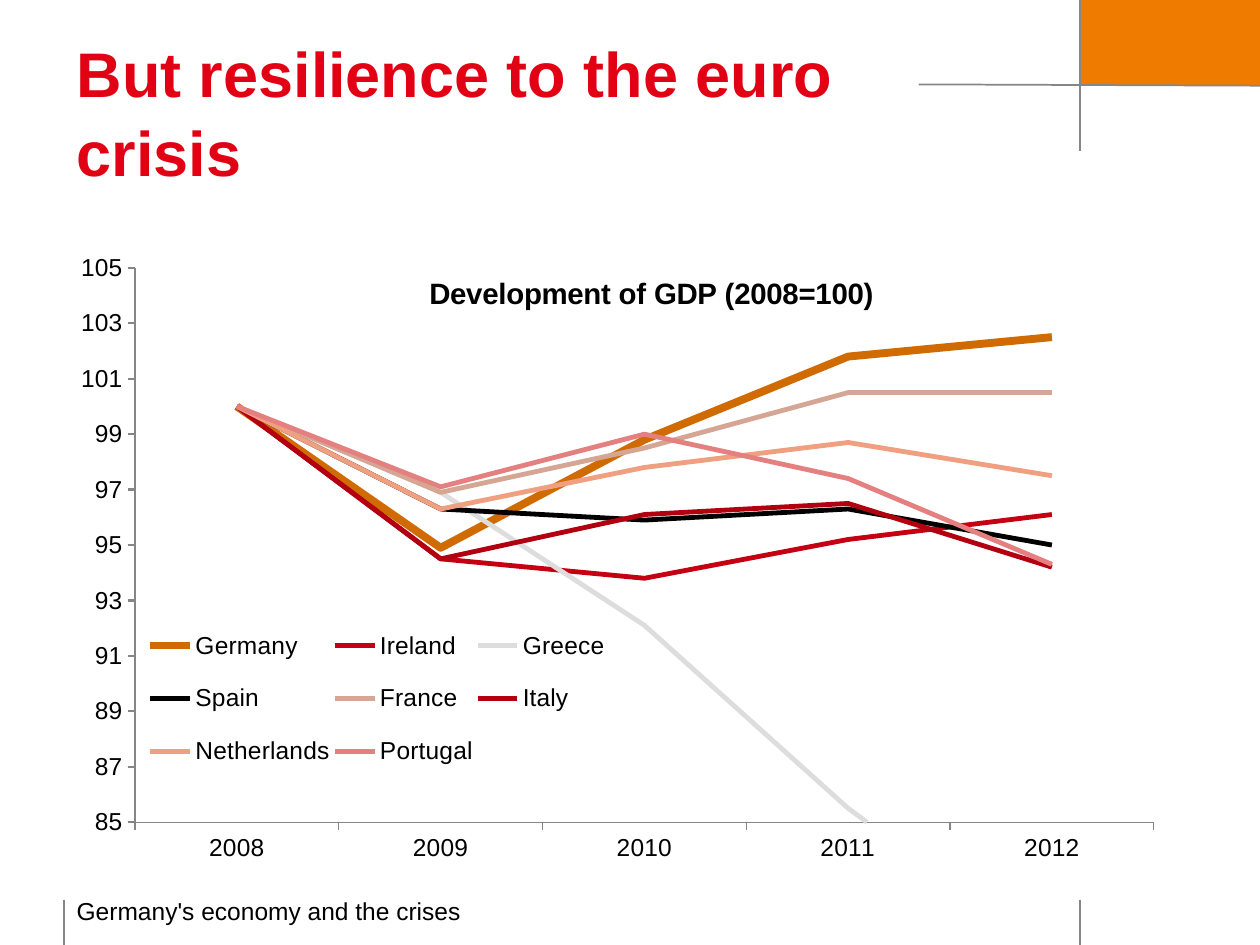
from pptx import Presentation
from pptx.chart.data import CategoryChartData
from pptx.dml.color import RGBColor
from pptx.enum.chart import XL_CHART_TYPE, XL_LEGEND_POSITION, XL_TICK_MARK
from pptx.enum.shapes import MSO_CONNECTOR, MSO_SHAPE
from pptx.enum.text import MSO_ANCHOR
from pptx.oxml import parse_xml
from pptx.oxml.ns import nsdecls, qn
from pptx.util import Inches, Pt

FONT = "Arial"
ORANGE = RGBColor(0xEF, 0x7C, 0x00)
RED = RGBColor(0xE2, 0x00, 0x15)
GREY = RGBColor(0x86, 0x86, 0x86)
BLACK = RGBColor(0x00, 0x00, 0x00)

YEARS = ["2008", "2009", "2010", "2011", "2012"]
# country: (GDP index by year, line colour, line width in points)
GDP = {
    "Germany": ([100, 94.9, 98.8, 101.8, 102.5], RGBColor(0xCF, 0x6B, 0x00), 4.5),
    "Ireland": ([100, 94.5, 93.8, 95.2, 96.1], RGBColor(0xC4, 0x00, 0x12), 2.75),
    "Greece": ([100, 96.9, 92.1, 85.5, 80.1], RGBColor(0xDD, 0xDD, 0xDD), 2.75),
    "Spain": ([100, 96.3, 95.9, 96.3, 95], BLACK, 2.75),
    "France": ([100, 96.9, 98.5, 100.5, 100.5], RGBColor(0xD6, 0xA6, 0x94), 2.75),
    "Italy": ([100, 94.5, 96.1, 96.5, 94.2], RGBColor(0xB2, 0x00, 0x10), 2.75),
    "Netherlands": ([100, 96.3, 97.8, 98.7, 97.5], RGBColor(0xF0, 0xA0, 0x80), 2.75),
    "Portugal": ([100, 97.1, 99, 97.4, 94.3], RGBColor(0xE4, 0x80, 0x80), 2.75),
}


def add_rule(slide, x1, y1, x2, y2):
    rule = slide.shapes.add_connector(
        MSO_CONNECTOR.STRAIGHT, Inches(x1), Inches(y1), Inches(x2), Inches(y2))
    rule.line.color.rgb = GREY
    rule.line.width = Pt(1)
    rule._element.spPr.append(parse_xml(f"<a:effectLst {nsdecls('a')}/>"))


def add_corner(slide, left, top, width, height):
    """Orange corner block with the two rules that cross at its inner corner."""
    block = slide.shapes.add_shape(
        MSO_SHAPE.RECTANGLE, Inches(left), Inches(top), Inches(width), Inches(height))
    block.shadow.inherit = False
    block.fill.solid()
    block.fill.fore_color.rgb = ORANGE
    block.line.fill.background()
    add_rule(slide, left, top, left, top + 1.2)
    add_rule(slide, left - 1.28, top + height - 0.01, left + width, top + height)


def add_text(slide, box, text, size, color, bold=False, anchor=MSO_ANCHOR.TOP, spacing=None):
    frame = slide.shapes.add_textbox(*map(Inches, box)).text_frame
    frame.word_wrap = True
    frame.vertical_anchor = anchor
    paragraph = frame.paragraphs[0]
    paragraph.line_spacing = spacing
    run = paragraph.add_run()
    run.text = text
    run.font.name = FONT
    run.font.size = Pt(size)
    run.font.bold = bold
    run.font.color.rgb = color


def add_footer(slide, left, top, width, height):
    rule_top = top + 0.08
    for x in (left, left + 8.06):
        add_rule(slide, x, rule_top, x, rule_top + 0.36)
    add_text(slide, (left, top, width, height), "Germany's economy and the crises", 14, BLACK)


def place(element, index, x, y, w=None, h=None, inner=False):
    """Give a chart part a manual layout, in fractions of the chart."""
    for old in element.findall(qn("c:layout")):
        element.remove(old)
    target = '<c:layoutTarget val="inner"/>' if inner else ""
    sizes = "" if w is None else f'<c:w val="{w}"/><c:h val="{h}"/>'
    element.insert(index, parse_xml(
        f"<c:layout {nsdecls('c')}><c:manualLayout>{target}"
        '<c:xMode val="edge"/><c:yMode val="edge"/>'
        f'<c:x val="{x}"/><c:y val="{y}"/>{sizes}</c:manualLayout></c:layout>'))


def style_axes(chart):
    for axis, width in ((chart.category_axis, 0.75), (chart.value_axis, 1.25)):
        axis.has_major_gridlines = False
        axis.major_tick_mark = XL_TICK_MARK.OUTSIDE
        axis.minor_tick_mark = XL_TICK_MARK.NONE
        axis.format.line.color.rgb = GREY
        axis.format.line.width = Pt(width)
    chart.value_axis.minimum_scale = 85
    chart.value_axis.maximum_scale = 105
    chart.value_axis.major_unit = 2
    chart.value_axis.tick_labels.number_format = "General"
    chart.value_axis.tick_labels.number_format_is_linked = False


def add_chart_title(chart, text):
    title = chart.chart_title
    run = title.text_frame.paragraphs[0].add_run()
    run.text = text
    run.font.name = FONT
    run.font.size = Pt(16.8)
    run.font.bold = True
    run.font.color.rgb = BLACK
    element = title._element
    for old in element.findall(qn("c:overlay")):
        element.remove(old)
    place(element, 1, 0.31, 0.04)
    element.insert(2, parse_xml(f'<c:overlay {nsdecls("c")} val="1"/>'))


def add_gdp_chart(slide, left, top, width, height):
    data = CategoryChartData()
    data.categories = YEARS
    for country, (values, _, _) in GDP.items():
        data.add_series(country, values)
    chart = slide.shapes.add_chart(
        XL_CHART_TYPE.LINE, Inches(left), Inches(top), Inches(width), Inches(height), data).chart
    chart.font.name = FONT
    chart.font.size = Pt(14)
    chart.font.color.rgb = BLACK

    chart.plots[0].vary_by_categories = False
    for series, (_, color, line_width) in zip(chart.plots[0].series, GDP.values()):
        series.smooth = False
        series.format.line.color.rgb = color
        series.format.line.width = Pt(line_width)

    style_axes(chart)
    add_chart_title(chart, "Development of GDP (2008=100)")
    chart.has_legend = True
    chart.legend.position = XL_LEGEND_POSITION.RIGHT
    chart.legend.include_in_layout = True
    place(chart.legend._element, 1, 0.07, 0.57, 0.4, 0.29)
    plot_area = chart._chartSpace.chart.plotArea
    place(plot_area, 0, 0.061, 0.037, 0.878, 0.873, inner=True)


def main():
    prs = Presentation()
    prs.slide_width = Inches(10)
    prs.slide_height = Inches(7.5)
    slide = prs.slides.add_slide(prs.slide_layouts[6])
    add_corner(slide, 8.57, 0, 1.43, 0.68)
    add_text(slide, (0.51, 0, 6.61, 1.55), "But resilience to the euro crisis", 36, RED,
             bold=True, anchor=MSO_ANCHOR.BOTTOM, spacing=1.04)
    add_footer(slide, 0.51, 7.06, 7.95, 0.36)
    add_gdp_chart(slide, 0.51, 1.94, 9.21, 5.04)
    prs.save("out.pptx")


if __name__ == "__main__":
    main()
